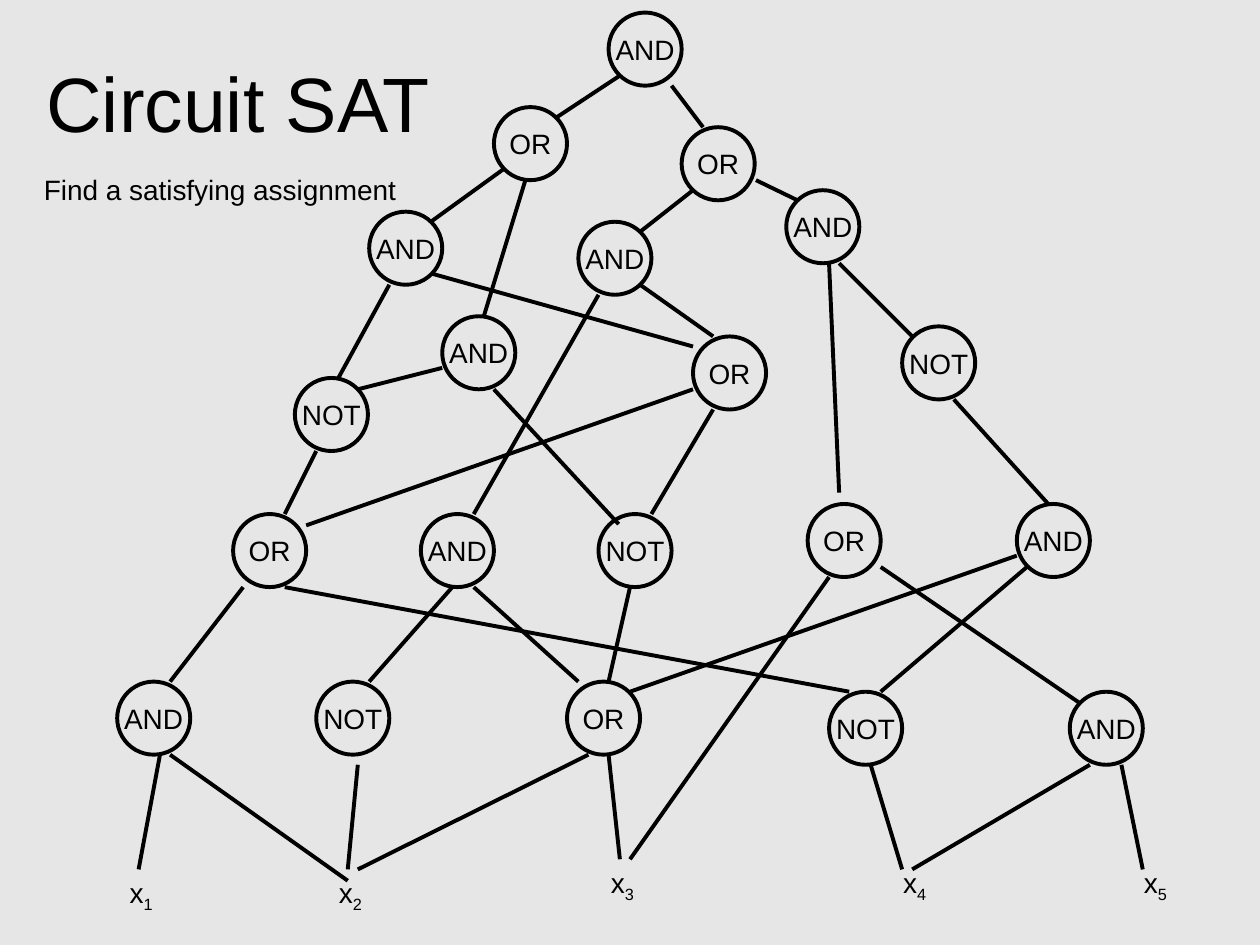
from lxml import etree
from pptx import Presentation
from pptx import util as u
from pptx.dml import color
from pptx.enum import shapes, text
from pptx.oxml import ns

INK = "000000"
GATE_SIZE = 0.58
LINE_WIDTH = 2.25

GATES = {
    "AND": [(4.83, 0.1), (6.24, 1.51), (2.93, 1.68), (4.59, 1.76), (3.51, 2.51),
            (8.07, 4), (3.34, 4.08), (0.93, 5.41), (8.49, 5.49)],
    "OR": [(3.92, 0.85), (5.41, 1.01), (5.5, 2.67), (6.41, 4), (1.85, 4.08), (4.5, 5.41)],
    "NOT": [(7.16, 2.59), (2.34, 3), (4.75, 4.08), (2.51, 5.41), (6.58, 5.49)],
}

VARIABLES = [(0.93, 6.9), (2.59, 6.9), (4.75, 6.82), (7.07, 6.82), (8.98, 6.82)]

WIRES = [
    (4.42, 0.93, 4.92, 0.6), (5.58, 1.01, 5.33, 0.68),
    (3.42, 1.76, 4, 1.34), (3.84, 2.51, 4.17, 1.43),
    (5.08, 1.84, 5.5, 1.51), (6, 1.43, 6.33, 1.59),
    (2.68, 3.01, 3.09, 2.26), (3.42, 2.17, 5.5, 2.75),
    (5.66, 2.67, 5.08, 2.26), (4.75, 2.34, 3.76, 4.08),
    (6.58, 2.09, 6.66, 3.91), (6.66, 2.09, 7.24, 2.67),
    (2.84, 3.09, 3.51, 2.92), (4.91, 4.16, 3.92, 3.09),
    (2.26, 4.08, 2.51, 3.58), (2.43, 4.17, 5.5, 3.09),
    (5.17, 4.08, 5.66, 3.25), (7.57, 3.17, 8.32, 4),
    (1.35, 5.41, 1.93, 4.66), (2.26, 4.66, 6.74, 5.49),
    (2.93, 5.41, 3.59, 4.66), (4.59, 5.41, 3.76, 4.66),
    (4.83, 5.41, 5, 4.66), (5, 5.49, 8.07, 4.41),
    (6.99, 5.49, 8.15, 4.5), (6.99, 4.5, 8.57, 5.58),
    (1.1, 6.9, 1.27, 5.99), (2.76, 6.99, 1.35, 5.99),
    (2.76, 6.9, 2.84, 6.07), (2.84, 6.9, 4.67, 5.99),
    (4.92, 6.82, 4.83, 5.99), (5, 6.82, 6.58, 4.58),
    (7.16, 6.9, 6.91, 6.07), (7.24, 6.9, 8.65, 6.07),
    (9.07, 6.9, 8.9, 6.07),
]


def rgb(value):
    return color.RGBColor.from_string(value)


def style_paragraph(paragraph, size):
    paragraph.font.name = "Arial"
    paragraph.font.size = u.Pt(size)
    paragraph.font.color.rgb = rgb(INK)


def style_line(line):
    line.color.rgb = rgb(INK)
    line.width = u.Pt(LINE_WIDTH)


def add_text(slide, box, content, size, wrap=True, anchor=text.MSO_ANCHOR.TOP):
    shape = slide.shapes.add_textbox(*map(u.Inches, box))
    frame = shape.text_frame
    frame.word_wrap = wrap
    frame.vertical_anchor = anchor
    paragraph = frame.paragraphs[0]
    paragraph.add_run().text = content
    style_paragraph(paragraph, size)
    return paragraph


def add_variable(slide, left, top, index):
    paragraph = add_text(slide, (left, top, 0.41, 0.37), "x", 16)
    subscript = paragraph.add_run()
    subscript.text = str(index)
    subscript.font._element.set("baseline", "-25000")


def add_gate(slide, left, top, label):
    shape = slide.shapes.add_shape(
        shapes.MSO_SHAPE.OVAL, u.Inches(left), u.Inches(top),
        u.Inches(GATE_SIZE), u.Inches(GATE_SIZE))
    shape.shadow.inherit = False
    shape.fill.background()
    style_line(shape.line)
    frame = shape.text_frame
    frame.word_wrap = False
    frame.vertical_anchor = text.MSO_ANCHOR.MIDDLE
    paragraph = frame.paragraphs[0]
    paragraph.text = label
    paragraph.alignment = text.PP_ALIGN.CENTER
    style_paragraph(paragraph, 16)


def add_wire(slide, ends):
    connector = slide.shapes.add_connector(
        shapes.MSO_CONNECTOR.STRAIGHT, *map(u.Inches, ends))
    style_line(connector.line)
    etree.SubElement(connector._element.spPr, ns.qn("a:effectLst"))


def main():
    presentation = Presentation()
    presentation.slide_width = u.Inches(10)
    presentation.slide_height = u.Inches(7.5)
    slide = presentation.slides.add_slide(presentation.slide_layouts[6])
    slide.background.fill.solid()
    slide.background.fill.fore_color.rgb = rgb("E6E6E6")

    add_text(slide, (0.27, 0.18, 9, 1.25), "Circuit SAT", 44,
             anchor=text.MSO_ANCHOR.MIDDLE)
    add_text(slide, (0.25, 1.32, 3, 0.37), "Find a satisfying assignment", 16, wrap=False)
    for label, positions in GATES.items():
        for left, top in positions:
            add_gate(slide, left, top, label)
    for index, (left, top) in enumerate(VARIABLES, start=1):
        add_variable(slide, left, top, index)
    for ends in WIRES:
        add_wire(slide, ends)

    presentation.save("out.pptx")


if __name__ == "__main__":
    main()
